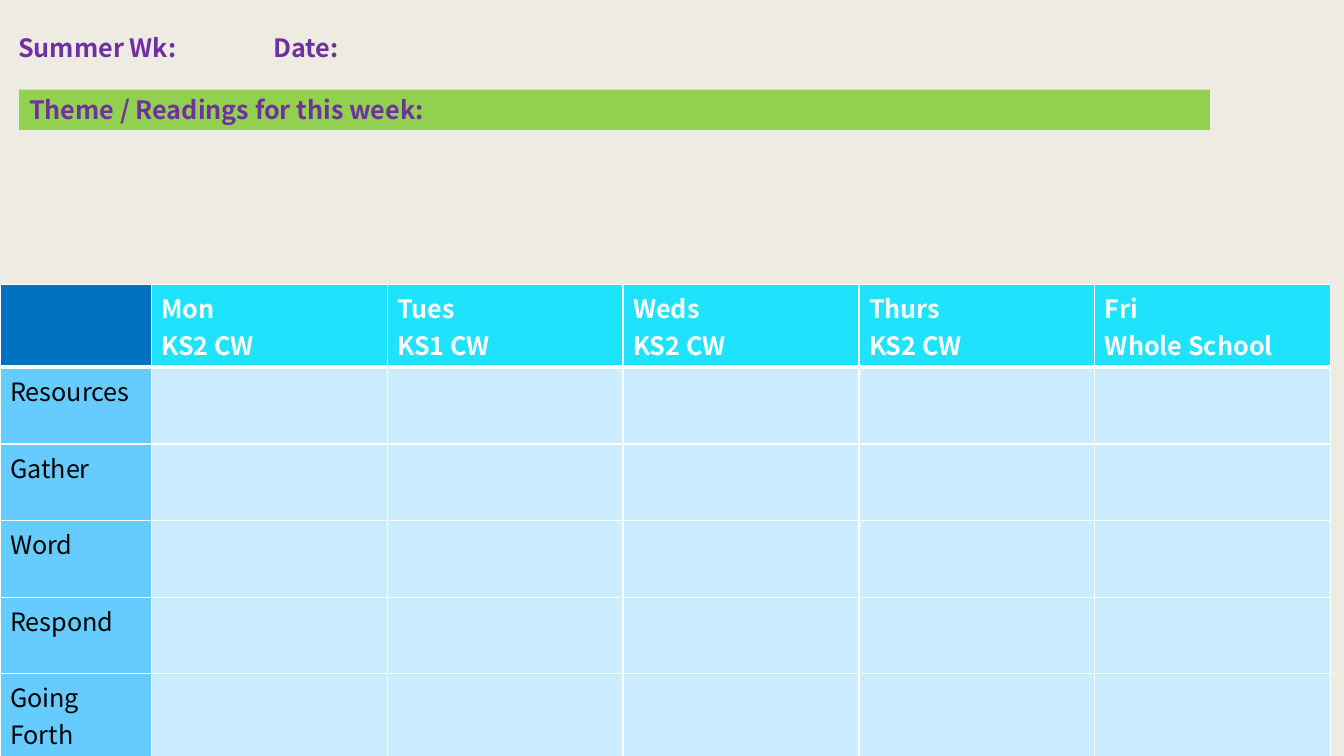
from dataclasses import dataclass

from lxml.etree import SubElement
from pptx import Presentation
from pptx.dml.color import RGBColor
from pptx.enum.shapes import MSO_SHAPE
from pptx.enum.text import MSO_ANCHOR, MSO_AUTO_SIZE, PP_ALIGN
from pptx.oxml.ns import qn
from pptx.table import _Cell
from pptx.text.text import TextFrame
from pptx.util import Inches, Pt

FONT = "Noto Sans CJK JP"
PURPLE = "7030A0"
WHITE = "FFFFFF"
BLACK = "000000"
CORNER_BLUE = "0070C0"
DAY_CYAN = "1FE3FD"
STAGE_BLUE = "66CCFF"
ENTRY_BLUE = "CCECFF"


@dataclass
class Day:
    name: str
    group: str


DAYS = [
    Day("Mon", "KS2 CW"),
    Day("Tues", "KS1 CW"),
    Day("Weds", "KS2 CW"),
    Day("Thurs", "KS2 CW"),
    Day("Fri", "Whole School"),
]
STAGES = ["Resources", "Gather", "Word", "Respond", "Going Forth"]


def rgb(code: str) -> RGBColor:
    return RGBColor.from_string(code)


def write(frame: TextFrame, text: str, *, color: str, bold: bool = True,
          tab: float | None = None) -> None:
    frame.word_wrap = True
    frame.text = text
    for paragraph in frame.paragraphs:
        paragraph.alignment = PP_ALIGN.LEFT
        if tab is not None:
            stops = SubElement(paragraph._p.get_or_add_pPr(), qn("a:tabLst"))
            SubElement(stops, qn("a:tab"), pos=str(Inches(tab)), algn="l")
        for run in paragraph.runs:
            font = run.font
            font.name, font.size, font.bold = FONT, Pt(18), bold
            font.color.rgb = rgb(color)


def style_cell(cell: _Cell, fill: str, bottom: float) -> None:
    properties = cell._tc.get_or_add_tcPr()
    for side, width in {"L": 1, "R": 1, "T": 1, "B": bottom}.items():
        line = SubElement(properties, qn(f"a:ln{side}"), w=str(Pt(width)))
        solid = SubElement(line, qn("a:solidFill"))
        SubElement(solid, qn("a:srgbClr"), val=WHITE)
    cell.fill.solid()
    cell.fill.fore_color.rgb = rgb(fill)


def main() -> None:
    deck = Presentation()
    deck.slide_width, deck.slide_height = Inches(13.33), Inches(7.5)
    slide = deck.slides.add_slide(deck.slide_layouts[5])
    slide.background.fill.solid()
    slide.background.fill.fore_color.rgb = rgb("EEEBE2")

    heading = slide.shapes.title
    heading.left, heading.top = Inches(0.08), Inches(0.27)
    heading.width, heading.height = Inches(12.98), Inches(0.4)
    heading.text_frame.auto_size = MSO_AUTO_SIZE.NONE
    heading.text_frame.vertical_anchor = MSO_ANCHOR.MIDDLE
    write(heading.text_frame, "Summer Wk:\tDate:", color=PURPLE, tab=2.53)

    theme = slide.shapes.add_shape(
        MSO_SHAPE.RECTANGLE, Inches(0.19), Inches(0.89), Inches(11.81), Inches(0.4))
    theme.shadow.inherit = False
    theme.fill.solid()
    theme.fill.fore_color.rgb = rgb("92D050")
    theme.line.fill.background()
    write(theme.text_frame, "Theme / Readings for this week:", color=PURPLE)

    planner = slide.shapes.add_table(
        len(STAGES) + 1, len(DAYS) + 1,
        Inches(0), Inches(2.82), Inches(13.2), Inches(4.56)).table
    for index, column in enumerate(planner.columns):
        column.width = Inches(2.34 if index else 1.5)

    style_cell(planner.cell(0, 0), CORNER_BLUE, bottom=3)
    for column, day in enumerate(DAYS, start=1):
        cell = planner.cell(0, column)
        style_cell(cell, DAY_CYAN, bottom=3)
        write(cell.text_frame, f"{day.name}\n{day.group}", color=WHITE)
    for row, stage in enumerate(STAGES, start=1):
        style_cell(planner.cell(row, 0), STAGE_BLUE, bottom=1)
        write(planner.cell(row, 0).text_frame, stage, color=BLACK, bold=False)
        for column in range(1, len(DAYS) + 1):
            style_cell(planner.cell(row, column), ENTRY_BLUE, bottom=1)

    deck.save("out.pptx")


if __name__ == "__main__":
    main()
